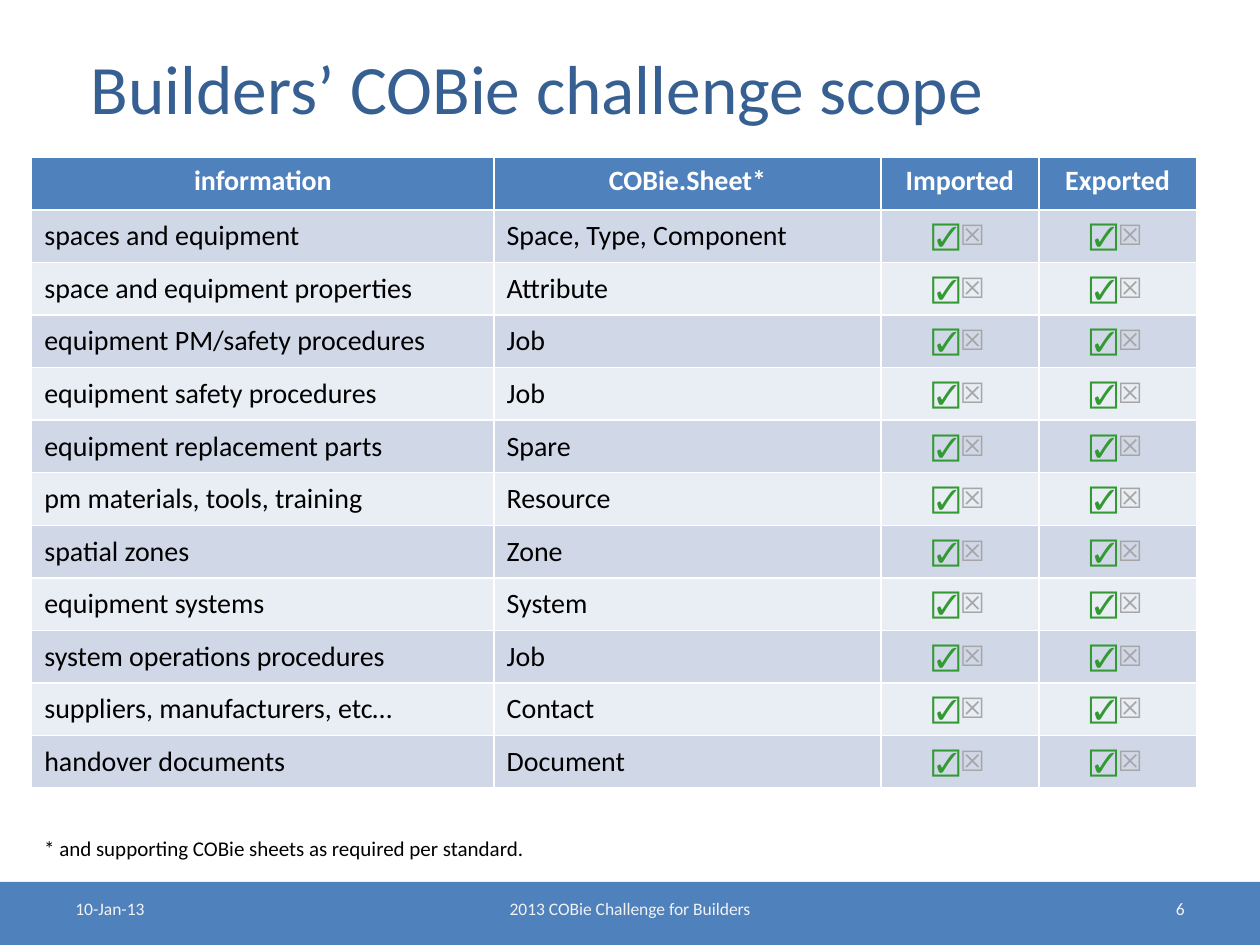
from pptx import Presentation
from pptx.dml.color import RGBColor
from pptx.enum.shapes import MSO_SHAPE as SHAPE
from pptx.enum.text import MSO_ANCHOR as ANCHOR, PP_ALIGN as ALIGN
from pptx.util import Cm, Pt

BLUE = RGBColor(0x4F, 0x81, 0xBD)
NAVY = RGBColor(0x37, 0x60, 0x92)
BAND_DARK = RGBColor(0xD0, 0xD8, 0xE8)
BAND_LIGHT = RGBColor(0xE9, 0xED, 0xF4)
GREEN = RGBColor(0x33, 0x99, 0x33)
GREY = RGBColor(0xA6, 0xA6, 0xA6)
PALE = RGBColor(0xF2, 0xF2, 0xF2)
WHITE = RGBColor(0xFF, 0xFF, 0xFF)
BLACK = RGBColor(0, 0, 0)

HEADERS = ["information", "COBie.Sheet*", "Imported", "Exported"]
SCOPE = [
    ("spaces and equipment", "Space, Type, Component"),
    ("space and equipment properties", "Attribute"),
    ("equipment PM/safety procedures", "Job"),
    ("equipment safety procedures", "Job"),
    ("equipment replacement parts", "Spare"),
    ("pm materials, tools, training", "Resource"),
    ("spatial zones", "Zone"),
    ("equipment systems", "System"),
    ("system operations procedures", "Job"),
    ("suppliers, manufacturers, etc…", "Contact"),
    ("handover documents", "Document"),
]
COL_WIDTHS = [9.32, 7.8, 3.18, 3.18]
HEADER_HEIGHT, ROW_HEIGHT = 1.05, 1.06


def style_run(r, size, color, bold=False):
    r.font.name = "Calibri"
    r.font.size = Pt(size)
    r.font.color.rgb = color
    r.font.bold = bold


def add_label(text, left, top, width, height, size, color, align, wrap=True):
    tf = s.shapes.add_textbox(Cm(left), Cm(top), Cm(width), Cm(height)).text_frame
    tf.word_wrap = wrap
    p = tf.paragraphs[0]
    p.text = text
    p.alignment = align
    style_run(p.runs[0], size, color)


prs = Presentation()
prs.slide_width, prs.slide_height = Cm(25.4), Cm(19.05)
s = prs.slides.add_slide(prs.slide_layouts[5])

# Title
title = s.shapes.title
title.left, title.top, title.width, title.height = Cm(1.27), Cm(0.76), Cm(22.86), Cm(1.98)
tf = title.text_frame
tf.text = "Builders’ COBie challenge scope"
tf.vertical_anchor = ANCHOR.MIDDLE
tf.margin_left = Cm(0.56)
tf.paragraphs[0].alignment = ALIGN.LEFT
style_run(tf.paragraphs[0].runs[0], 39.6, NAVY)

# Scope table
table = s.shapes.add_table(
    len(SCOPE) + 1, len(HEADERS), Cm(0.64), Cm(3.18),
    Cm(sum(COL_WIDTHS)), Cm(HEADER_HEIGHT + ROW_HEIGHT * len(SCOPE))).table
for column, width in zip(table.columns, COL_WIDTHS):
    column.width = Cm(width)
for i, row in enumerate(table.rows):
    row.height = Cm(ROW_HEIGHT if i else HEADER_HEIGHT)

for cell, text in zip(table.rows[0].cells, HEADERS):
    cell.fill.solid()
    cell.fill.fore_color.rgb = BLUE
    p = cell.text_frame.paragraphs[0]
    p.text = text
    p.alignment = ALIGN.CENTER
    style_run(p.runs[0], 16, WHITE, bold=True)

for i, texts in enumerate(SCOPE, start=1):
    for j, cell in enumerate(table.rows[i].cells):
        cell.fill.solid()
        cell.fill.fore_color.rgb = BAND_DARK if i % 2 else BAND_LIGHT
        cell.vertical_anchor = ANCHOR.MIDDLE
        p = cell.text_frame.paragraphs[0]
        if j < len(texts):
            p.text = texts[j]
            style_run(p.runs[0], 16, BLACK)
        else:
            p.alignment = ALIGN.CENTER
            for mark, color in (("☑", GREEN), ("☒", GREY)):
                r = p.add_run()
                r.text = mark
                style_run(r, 16, color, bold=True)

# Footer band with its three labels, and the footnote
band = s.shapes.add_shape(SHAPE.RECTANGLE, 0, Cm(17.78), prs.slide_width, Cm(1.27))
band.shadow.inherit = False
band.fill.solid()
band.fill.fore_color.rgb = BLUE
band.line.fill.background()

for text, left, width, align in (
        ("2013 COBie Challenge for Builders", 8.68, 8.04, ALIGN.CENTER),
        ("6", 18.2, 5.93, ALIGN.RIGHT),
        ("10-Jan-13", 1.27, 5.93, ALIGN.LEFT)):
    add_label(text, left, 17.98, width, 0.68, 10, PALE, align)
add_label("* and supporting COBie sheets as required per standard.",
          0.64, 16.72, 10.28, 0.77, 12, BLACK, ALIGN.LEFT, wrap=False)

prs.save("out.pptx")
